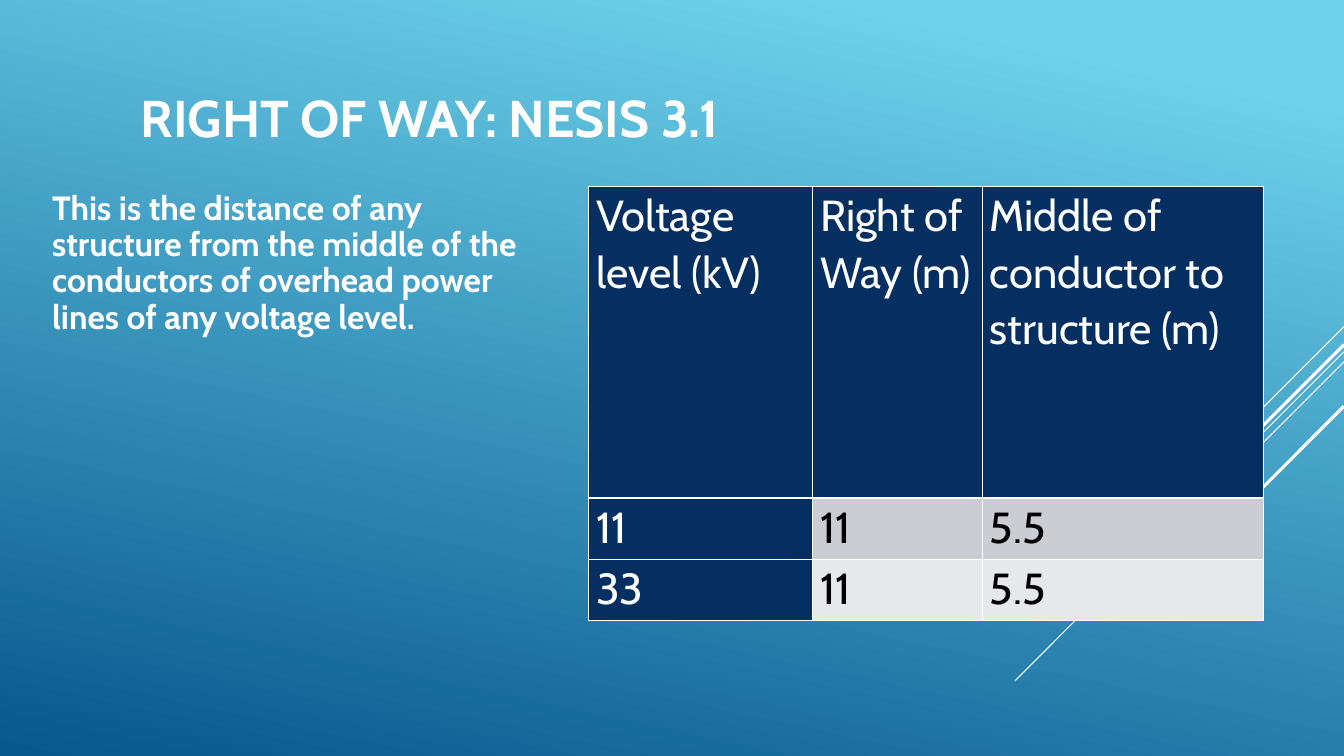
"""Builds the right-of-way slide with its clearance table."""
from dataclasses import dataclass

from lxml import etree
from pptx import Presentation
from pptx.dml.color import RGBColor
from pptx.enum.shapes import MSO_CONNECTOR
from pptx.enum.text import MSO_ANCHOR, PP_ALIGN
from pptx.oxml.ns import qn
from pptx.slide import Slide
from pptx.table import _Cell
from pptx.text.text import _Paragraph
from pptx.util import Pt

STRAIGHT = MSO_CONNECTOR.STRAIGHT
LEFT = PP_ALIGN.LEFT
TOP = MSO_ANCHOR.TOP
SLIDE_WIDTH, SLIDE_HEIGHT = 960, 540


@dataclass(frozen=True)
class Theme:
    font: str = "Cabin"
    white: str = "FFFFFF"
    black: str = "000000"
    navy: str = "052F61"
    bands: tuple[str, str] = ("CCCDD2", "E7E8EA")
    sky: str = "6ED2EB"
    deep_blue: str = "06588E"
    title_size: float = 36.9
    body_size: float = 24
    table_size: float = 31


@dataclass(frozen=True)
class Streak:
    top: float
    run: float
    weight: float


@dataclass(frozen=True)
class Caption:
    text: str
    left: float
    top: float
    width: float
    height: float
    size: float
    line_spacing: float


THEME = Theme()
STREAKS = (
    Streak(233.3, 72, 0.75),
    Streak(251.3, 234.9, 0.75),
    Streak(258.5, 149, 0.75),
    Streak(246.2, 137.5, 2.25),
    Streak(290.2, 100, 2.25),
)
CAPTIONS = (
    Caption("RIGHT OF WAY: NESIS 3.1", 93.6, 58, 482.4, 52, THEME.title_size, 1),
    Caption(
        "This is the distance of any structure from the middle of the "
        "conductors of overhead power lines of any voltage level.",
        30.2, 133.2, 370.8, 194.4, THEME.body_size, 0.9,
    ),
)
CLEARANCES = (
    ("Voltage level (kV)", "Right of Way (m)", "Middle of conductor to structure (m)"),
    ("11", "11", "5.5"),
    ("33", "11", "5.5"),
)
TABLE_LEFT, TABLE_TOP = 420.4, 133.2
COLUMN_WIDTHS = (160.2, 121.1, 201)
ROW_HEIGHTS = (222.6, 43.8, 43.8)
CELL_INSET = 5.4
BORDER_WEIGHT = 1


def paint_background(slide: Slide) -> None:
    fill = slide.background.fill
    fill.gradient()
    fill.gradient_angle = 360 - 102
    stops = ((0.1, THEME.sky), (1, THEME.deep_blue))
    for stop, (position, color) in zip(fill.gradient_stops, stops):
        stop.position = position
        stop.color.rgb = RGBColor.from_string(color)


def draw_streak(slide: Slide, streak: Streak) -> None:
    connector = slide.shapes.add_connector(
        STRAIGHT, Pt(SLIDE_WIDTH), Pt(streak.top),
        Pt(SLIDE_WIDTH - streak.run), Pt(streak.top + streak.run),
    )
    connector.line.color.rgb = RGBColor.from_string(THEME.white)
    connector.line.width = Pt(streak.weight)
    etree.SubElement(connector._element.spPr, qn("a:effectLst"))


def style_paragraph(
    paragraph: _Paragraph, size: float, color: str, bold: bool, spacing: float
) -> None:
    paragraph.alignment = LEFT
    paragraph.line_spacing = spacing
    font = paragraph.font
    font.name = THEME.font
    font.size = Pt(size)
    font.bold = bold
    font.color.rgb = RGBColor.from_string(color)


def draw_caption(slide: Slide, caption: Caption) -> None:
    box = slide.shapes.add_textbox(
        Pt(caption.left), Pt(caption.top), Pt(caption.width), Pt(caption.height)
    )
    frame = box.text_frame
    frame.word_wrap = True
    frame.vertical_anchor = TOP
    frame.text = caption.text
    style_paragraph(
        frame.paragraphs[0], caption.size, THEME.white, True, caption.line_spacing
    )


def add_borders(cell: _Cell) -> None:
    properties = cell._tc.get_or_add_tcPr()
    for index, side in enumerate(("a:lnL", "a:lnR", "a:lnT", "a:lnB")):
        border = etree.Element(qn(side), w=str(Pt(BORDER_WEIGHT)))
        solid = etree.SubElement(border, qn("a:solidFill"))
        etree.SubElement(solid, qn("a:srgbClr"), val=THEME.white)
        properties.insert(index, border)


def fill_cell(cell: _Cell, text: str, fill: str, color: str) -> None:
    cell.text = text
    cell.margin_left = cell.margin_right = Pt(CELL_INSET)
    cell.margin_top = cell.margin_bottom = Pt(0)
    cell.vertical_anchor = TOP
    cell.fill.solid()
    cell.fill.fore_color.rgb = RGBColor.from_string(fill)
    style_paragraph(
        cell.text_frame.paragraphs[0], THEME.table_size, color, False, 1.07
    )
    add_borders(cell)


def draw_clearance_table(slide: Slide) -> None:
    table = slide.shapes.add_table(
        len(ROW_HEIGHTS), len(COLUMN_WIDTHS), Pt(TABLE_LEFT), Pt(TABLE_TOP),
        Pt(sum(COLUMN_WIDTHS)), Pt(sum(ROW_HEIGHTS)),
    ).table
    table.first_row = table.horz_banding = False
    for column, width in zip(table.columns, COLUMN_WIDTHS):
        column.width = Pt(width)
    for row, height in zip(table.rows, ROW_HEIGHTS):
        row.height = Pt(height)
    for r, values in enumerate(CLEARANCES):
        for c, value in enumerate(values):
            is_heading = r == 0 or c == 0
            fill = THEME.navy if is_heading else THEME.bands[r - 1]
            color = THEME.white if is_heading else THEME.black
            fill_cell(table.cell(r, c), value, fill, color)


def main() -> None:
    presentation = Presentation()
    presentation.slide_width = Pt(SLIDE_WIDTH)
    presentation.slide_height = Pt(SLIDE_HEIGHT)
    slide = presentation.slides.add_slide(presentation.slide_layouts[6])
    paint_background(slide)
    for streak in STREAKS:
        draw_streak(slide, streak)
    for caption in CAPTIONS:
        draw_caption(slide, caption)
    draw_clearance_table(slide)
    presentation.save("out.pptx")


if __name__ == "__main__":
    main()
